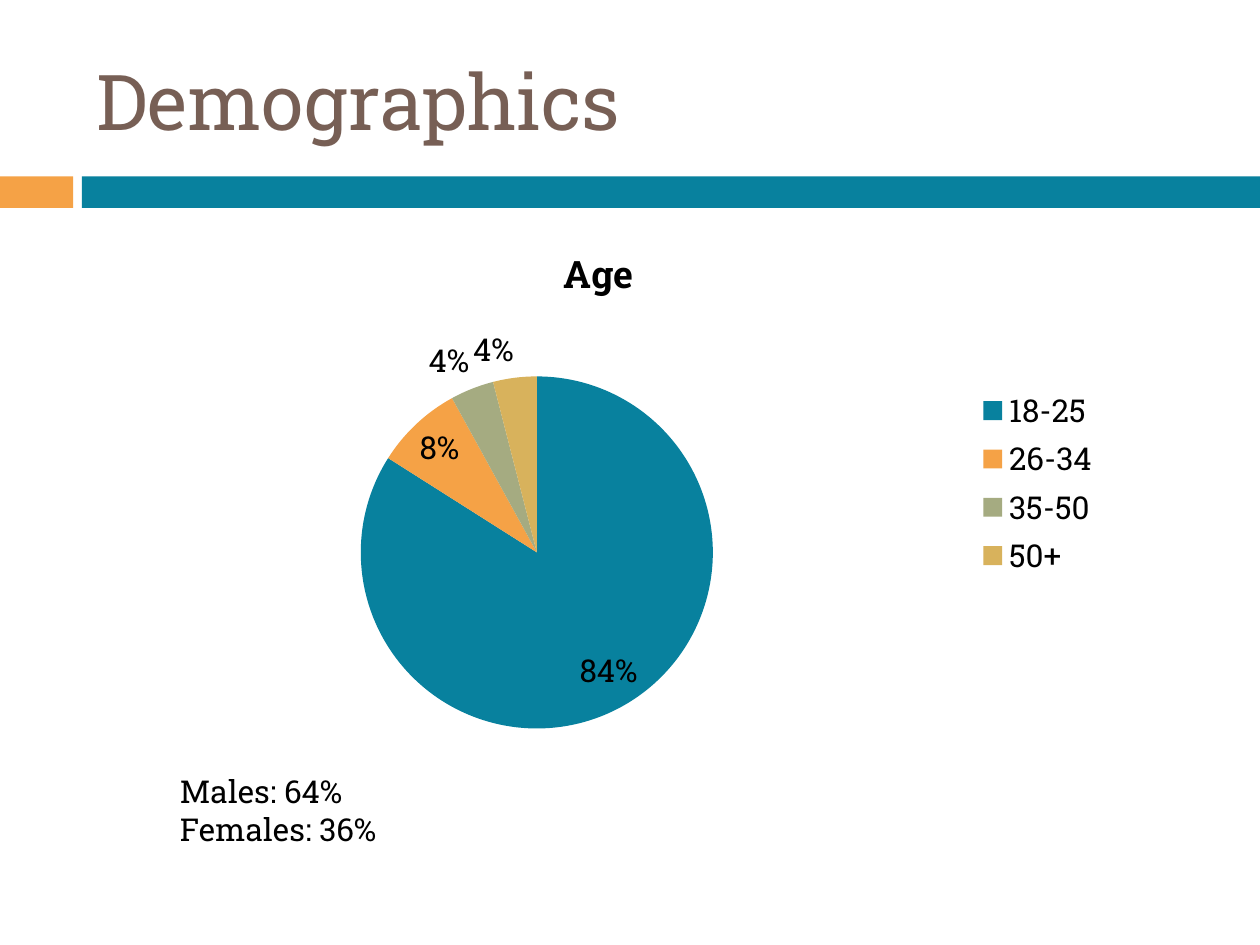
from dataclasses import dataclass

from pptx import Presentation
from pptx.chart.data import CategoryChartData
from pptx.dml.color import RGBColor
from pptx.enum.chart import XL_CHART_TYPE, XL_LABEL_POSITION, XL_LEGEND_POSITION
from pptx.enum.shapes import MSO_SHAPE
from pptx.enum.text import MSO_ANCHOR
from pptx.util import Inches, Pt


@dataclass(frozen=True)
class Theme:
    font: str = "Roboto Slab"
    title: str = "775F55"
    text: str = "000000"
    teal: str = "08819E"
    orange: str = "F5A246"
    sage: str = "A5AB81"
    gold: str = "D8B25C"
    title_size: float = 44
    chart_title_size: float = 21.6
    body_size: float = 18


THEME = Theme()


def style_font(font, size, color):
    font.name = THEME.font
    font.size = Pt(size)
    font.color.rgb = RGBColor.from_string(color)


def add_text(s, box, lines, size, color, anchor=MSO_ANCHOR.TOP):
    tf = s.shapes.add_textbox(*map(Inches, box)).text_frame
    tf.word_wrap = True
    tf.vertical_anchor = anchor
    for i, line in enumerate(lines):
        p = tf.paragraphs[0] if i == 0 else tf.add_paragraph()
        r = p.add_run()
        r.text = line
        style_font(r.font, size, color)


def add_band(s, box):
    left, top, width, height = box
    accent, gap = 0.58, 0.07
    start = accent + gap
    for x, w, color in ((0, accent, THEME.orange), (start, width - start, THEME.teal)):
        sp = s.shapes.add_shape(
            MSO_SHAPE.RECTANGLE, Inches(left + x), Inches(top), Inches(w), Inches(height)
        )
        sp.shadow.inherit = False
        sp.fill.solid()
        sp.fill.fore_color.rgb = RGBColor.from_string(color)
        sp.line.fill.background()


def add_age_chart(s, box):
    data = CategoryChartData()
    data.categories = ["18-25", "26-34", "35-50", "50+"]
    data.add_series("Age", (84, 8, 4, 4))
    chart = s.shapes.add_chart(XL_CHART_TYPE.PIE, *map(Inches, box), data).chart
    style_font(chart.font, THEME.body_size, THEME.text)

    chart.has_title = True
    r = chart.chart_title.text_frame.paragraphs[0].add_run()
    r.text = "Age"
    style_font(r.font, THEME.chart_title_size, THEME.text)
    r.font.bold = True
    chart.chart_title.include_in_layout = False

    chart.has_legend = True
    chart.legend.position = XL_LEGEND_POSITION.RIGHT
    chart.legend.include_in_layout = False

    plot = chart.plots[0]
    plot.vary_by_categories = True
    plot.has_data_labels = True
    labels = plot.data_labels
    labels.show_percentage = True
    labels.show_value = False
    labels.number_format = "0%"
    labels.number_format_is_linked = False
    labels.position = XL_LABEL_POSITION.BEST_FIT
    style_font(labels.font, THEME.body_size, THEME.text)

    colors = (THEME.teal, THEME.orange, THEME.sage, THEME.gold)
    for i, color in enumerate(colors):
        fill = plot.series[0].points[i].format.fill
        fill.solid()
        fill.fore_color.rgb = RGBColor.from_string(color)


def main():
    prs = Presentation()
    prs.slide_width, prs.slide_height = Inches(10), Inches(7.5)
    s = prs.slides.add_slide(prs.slide_layouts[6])
    add_band(s, (0, 1.4, 10, 0.25))
    add_text(s, (0.67, 0.25, 8.92, 1.08), ["Demographics"],
             THEME.title_size, THEME.title, MSO_ANCHOR.MIDDLE)
    add_age_chart(s, (0.67, 1.75, 8.16, 4.17))
    add_text(s, (1.33, 6.08, 7, 0.71), ["Males: 64%", "Females: 36%"],
             THEME.body_size, THEME.text)
    prs.save("out.pptx")


if __name__ == "__main__":
    main()
